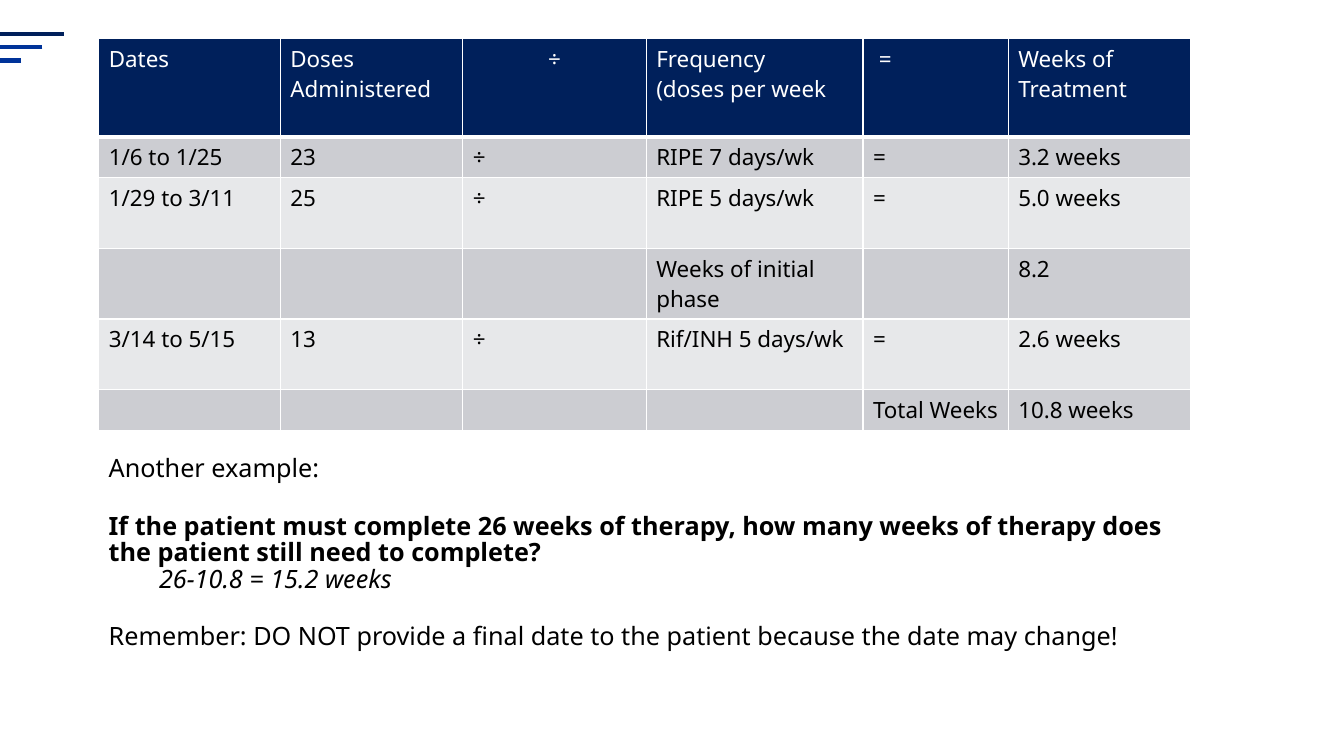
from lxml import etree
from pptx import Presentation
from pptx import util as u
from pptx.dml.color import RGBColor
from pptx.enum import shapes, text
from pptx.oxml import ns

PX = 9144
NAVY = RGBColor(0x00, 0x20, 0x5B)
BLUE = RGBColor(0x00, 0x33, 0x99)
DARK = RGBColor(0xCC, 0xCD, 0xD2)
LIGHT = RGBColor(0xE7, 0xE8, 0xEA)
WHITE = RGBColor(0xFF, 0xFF, 0xFF)
BLACK = RGBColor(0x00, 0x00, 0x00)
FACE = "Noto Sans"

WIDTHS = [180, 181, 182, 215, 144, 181]
HEIGHTS = [98, 40, 70, 70, 70, 40]
ROWS = [
    ["Dates", "Doses Administered", "÷", "Frequency\n(doses per week", " =", "Weeks of Treatment"],
    ["1/6 to 1/25", "23", "÷", "RIPE 7 days/wk", "=", "3.2 weeks"],
    ["1/29 to 3/11", "25", "÷", "RIPE 5 days/wk", "=", "5.0 weeks"],
    ["", "", "", "Weeks of initial phase", "", "8.2"],
    ["3/14 to 5/15", "13", "÷", "Rif/INH 5 days/wk", "=", "2.6 weeks"],
    ["", "", "", "", "Total Weeks", "10.8 weeks"],
]
NOTES = [
    ("Another example:", False, False, 0, 0),
    ("If the patient must complete 26 weeks of therapy, how many weeks of therapy "
     "does the patient still need to complete?", True, False, 22, 0),
    ("26-10.8 = 15.2 weeks", False, True, 0, 50),
    ("Remember: DO NOT provide a final date to the patient because the date may change!",
     False, False, 22, 0),
]


def px(*nums):
    return [u.Emu(n * PX) for n in nums]


def style(para, size, color, bold=False, slant=False):
    for run in para.runs:
        font = run.font
        font.name, font.size = FACE, u.Pt(size)
        font.bold, font.italic = bold, slant
        font.color.rgb = color


def edge(cell, side, width):
    line = etree.SubElement(cell._tc.get_or_add_tcPr(), ns.qn("a:ln" + side),
                            w=str(u.Pt(width)))
    fill = etree.SubElement(line, ns.qn("a:solidFill"))
    etree.SubElement(fill, ns.qn("a:srgbClr"), val=str(WHITE))


def add_bars(slide, left, top):
    for i, color in enumerate([NAVY, BLUE, BLUE]):
        y = top + 13 * i
        bar = slide.shapes.add_connector(shapes.MSO_CONNECTOR.STRAIGHT,
                                         *px(left + 63 - 21 * i, y, left, y))
        bar.line.color.rgb = color
        bar.line.width = u.Pt(3)
        etree.SubElement(bar._element.spPr, ns.qn("a:effectLst"))


def add_doses(slide, left, top):
    box = px(left, top, sum(WIDTHS), sum(HEIGHTS))
    table = slide.shapes.add_table(len(ROWS), len(WIDTHS), *box).table
    for col, width in zip(table.columns, px(*WIDTHS)):
        col.width = width
    for r, (row, high) in enumerate(zip(table.rows, px(*HEIGHTS))):
        row.height = high
        for c, cell in enumerate(row.cells):
            for side in "LRTB":
                edge(cell, side, 3 if r == 0 and side == "B" else 1)
            cell.fill.solid()
            cell.fill.fore_color.rgb = NAVY if r == 0 else DARK if r % 2 else LIGHT
            cell.text_frame.text = ROWS[r][c]
            for para in cell.text_frame.paragraphs:
                style(para, 16, BLACK if r else WHITE)
    table.cell(0, 2).text_frame.paragraphs[0].alignment = text.PP_ALIGN.CENTER


def add_notes(slide, left, top, width, height):
    frame = slide.shapes.add_textbox(*px(left, top, width, height)).text_frame
    frame.word_wrap = True
    frame.text = "\n".join(note[0] for note in NOTES)
    for para, (_, bold, slant, gap, dent) in zip(frame.paragraphs, NOTES):
        para.line_spacing = 0.88
        if gap:
            para.space_before = u.Pt(gap)
        if dent:
            para._p.get_or_add_pPr().set("marL", str(dent * PX))
        style(para, 18, BLACK, bold, slant)


def main():
    deck = Presentation()
    deck.slide_width, deck.slide_height = px(1333, 750)
    slide = deck.slides.add_slide(deck.slide_layouts[6])
    add_bars(slide, 0, 34)
    add_doses(slide, 98, 38)
    add_notes(slide, 98, 448, 1083, 283)
    deck.save("out.pptx")


if __name__ == "__main__":
    main()
